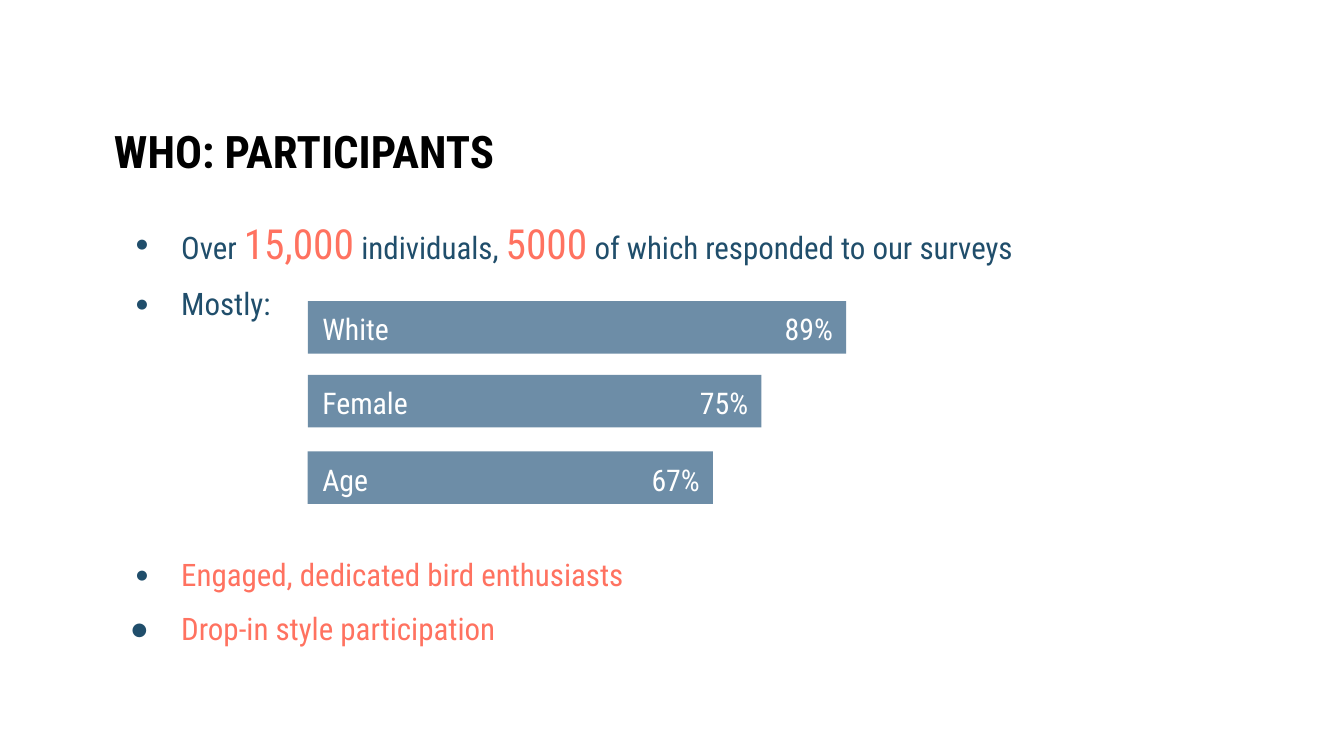
"""Build the slide on who the participants are."""
from lxml.etree import SubElement
from pptx import Presentation
from pptx.dml.color import RGBColor
from pptx.enum.shapes import MSO_SHAPE as Shape
from pptx.enum.text import MSO_ANCHOR as Anchor, PP_ALIGN as Align
from pptx.oxml.ns import qn
from pptx.util import Pt

COLORS = {"ink": "000000", "navy": "204E6B", "coral": "FF7260", "bar": "6D8DA7", "white": "FFFFFF"}
FONT = "Roboto Condensed"


def add_run(paragraph, text, size=16.6, color="navy", bold=False):
    run = paragraph.add_run()
    run.text = text
    run.font.name = FONT
    run.font.size = Pt(size)
    run.font.bold = bold
    run.font.color.rgb = RGBColor.from_string(COLORS[color])


def add_box(left, top, width, height, anchor=Anchor.TOP, wrap=True):
    frame = slide.shapes.add_textbox(Pt(left), Pt(top), Pt(width), Pt(height)).text_frame
    frame.word_wrap = wrap
    frame.vertical_anchor = anchor
    frame.margin_left = frame.margin_right = frame.margin_top = frame.margin_bottom = Pt(7.2)
    return frame


presentation = Presentation()
presentation.slide_width, presentation.slide_height = Pt(720), Pt(405)
slide = presentation.slides.add_slide(presentation.slide_layouts[6])

title = add_box(54, 42.5, 221, 59.8, anchor=Anchor.BOTTOM, wrap=False)
add_run(title.paragraphs[0], "WHO: PARTICIPANTS", size=24, color="ink", bold=True)

big = {"size": 22.2, "color": "coral"}
coral = {"color": "coral"}
bullets = [
    (0, 24, 42, [("Over ", {}), ("15,000", big), (" individuals, ", {}), ("5000", big),
                 (" of which responded to our surveys", {})]),
    (10, 24, 42, [("Mostly:", {})]),
    (126, 24, 42, [("Engaged, dedicated bird enthusiasts", coral)]),
    (10, 26.6, 58, [("Drop-in style participation", coral)]),
]
body = add_box(54, 111.6, 603.4, 250.6)
for index, (space, hanging, bullet_size, runs) in enumerate(bullets):
    paragraph = body.add_paragraph() if index else body.paragraphs[0]
    paragraph.line_spacing = 0.95
    paragraph.space_before = Pt(space)
    properties = paragraph._p.get_or_add_pPr()
    properties.set("marL", str(Pt(36)))
    properties.set("indent", str(-Pt(hanging)))
    bullet_color = SubElement(properties, qn("a:buClr"))
    SubElement(bullet_color, qn("a:srgbClr"), val=COLORS["navy"])
    SubElement(properties, qn("a:buSzPct"), val=str(bullet_size * 1000))
    SubElement(properties, qn("a:buFont"), typeface=FONT)
    SubElement(properties, qn("a:buChar"), char="●")
    for text, text_format in runs:
        add_run(paragraph, text, **text_format)

bar_left, bar_height, points_per_percent = 164.9, 28.2, 3.24
value_width = 51
for label, percent, top in [("White", 89, 161.3), ("Female", 75, 200.8), ("Age", 67, 241.8)]:
    bar_width = percent * points_per_percent
    bar = slide.shapes.add_shape(Shape.RECTANGLE, Pt(bar_left), Pt(top), Pt(bar_width), Pt(bar_height))
    bar.shadow.inherit = False
    bar.fill.solid()
    bar.fill.fore_color.rgb = RGBColor.from_string(COLORS["bar"])
    bar.line.fill.background()

    label_box = add_box(bar_left + 0.7, top - 1.8, 65.5, 33.8)
    add_run(label_box.paragraphs[0], label, size=16, color="white")

    value_box = add_box(bar_left + bar_width - value_width, top - 1.8, value_width, 33.8)
    value_box.paragraphs[0].alignment = Align.RIGHT
    add_run(value_box.paragraphs[0], f"{percent}%", size=16, color="white")

presentation.save("out.pptx")
